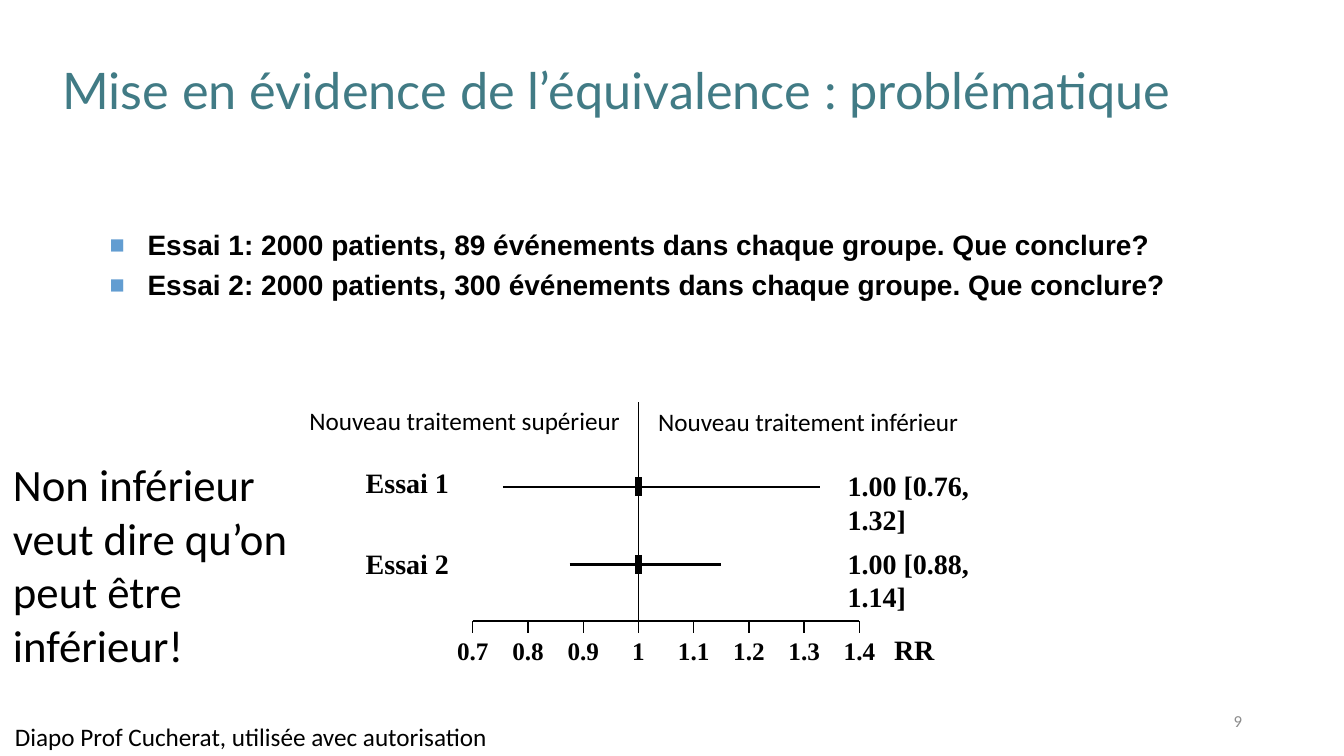
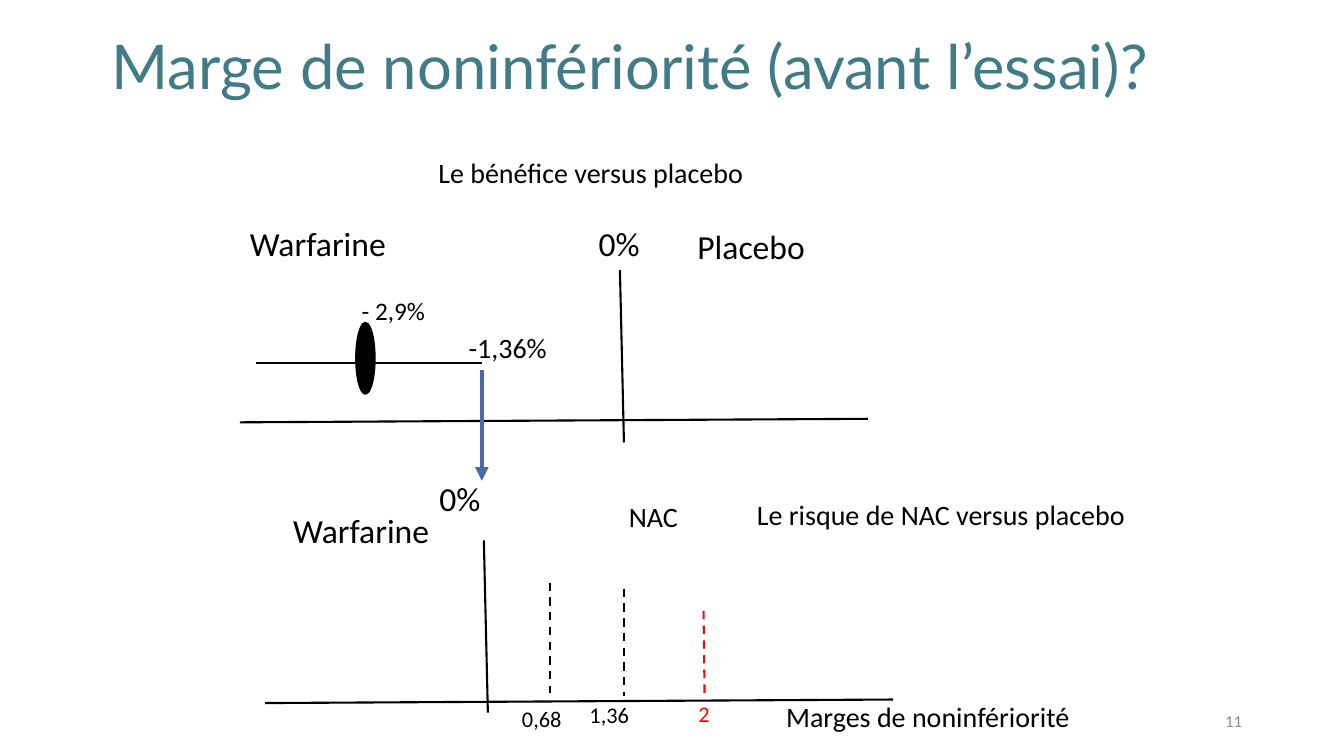
"""Build two slides on equivalence and non-inferiority margins."""
import dataclasses

import lxml.etree
import pptx
import pptx.dml.color
import pptx.enum.dml
import pptx.enum.shapes
import pptx.enum.text
import pptx.oxml.ns
import pptx.util

COLUMNS, ROWS = 133.33, 75
CELL = pptx.util.Inches(0.1)
ALIGN = pptx.enum.text.PP_ALIGN
ANCHOR = pptx.enum.text.MSO_ANCHOR


@dataclasses.dataclass(frozen=True)
class Theme:
    ink: str = "000000"
    title: str = "417B85"
    bullet: str = "629DD1"
    number: str = "8C8C8C"
    arrow: str = "4A66AC"
    alert: str = "FF0000"
    title_font: str = "Lato"
    body_font: str = "Calibri"
    list_font: str = "Arial"
    plot_font: str = "Times New Roman"
    statement_size: int = 32
    heading_size: int = 24
    text_size: int = 20
    label_size: int = 18
    small_size: int = 16
    number_size: int = 12
    thin: float = 1
    medium: float = 1.5
    thick: float = 3.25
    marker: float = 4.5


THEME = Theme()


def cells(count):
    return round(count * CELL)


def color(value):
    return pptx.dml.color.RGBColor.from_string(value)


def add_box(slide, left, top, width, height, wrap=False, anchor=ANCHOR.TOP):
    box = slide.shapes.add_textbox(cells(left), cells(top), cells(width), cells(height))
    frame = box.text_frame
    frame.word_wrap = wrap
    frame.vertical_anchor = anchor
    if not wrap:
        frame.auto_size = pptx.enum.text.MSO_AUTO_SIZE.SHAPE_TO_FIT_TEXT
    return frame


def add_run(paragraph, text, size, font=THEME.body_font, ink=THEME.ink, bold=False):
    run = paragraph.add_run()
    run.text = text
    run.font.size = pptx.util.Pt(size)
    run.font.name = font
    run.font.bold = bold
    run.font.color.rgb = color(ink)


def add_label(slide, text, left, top, width, size, align=ALIGN.LEFT, **style):
    paragraph = add_box(slide, left, top, width, size / 6 + 1).paragraphs[0]
    paragraph.alignment = align
    add_run(paragraph, text, size, **style)


def add_plot_label(slide, text, left, top, width, size=THEME.text_size, align=ALIGN.LEFT):
    add_label(slide, text, left, top, width, size, align, font=THEME.plot_font, bold=True)


def add_title(slide, text, left, top, width, size):
    paragraph = add_box(slide, left, top, width, 14.5, True, ANCHOR.MIDDLE).paragraphs[0]
    paragraph.line_spacing = 0.9
    add_run(paragraph, text, size, THEME.title_font, THEME.title)


def add_slide_number(slide, number):
    paragraph = add_box(slide, 94.2, 69.5, 30, 4, True, ANCHOR.MIDDLE).paragraphs[0]
    paragraph.alignment = ALIGN.RIGHT
    add_run(paragraph, number, THEME.number_size, ink=THEME.number)


def add_bullets(slide, lines, left, top, width, height):
    frame = add_box(slide, left, top, width, height, True)
    for index, text in enumerate(lines):
        paragraph = frame.add_paragraph() if index else frame.paragraphs[0]
        paragraph.space_before = pptx.util.Pt(4.5)
        add_run(paragraph, text, THEME.text_size, THEME.list_font, bold=True)
        properties = paragraph._p.get_or_add_pPr()
        indent = cells(3.75)
        properties.set("marL", str(indent))
        properties.set("indent", str(-indent))
        qualify = pptx.oxml.ns.qn
        fill = lxml.etree.SubElement(properties, qualify("a:buClr"))
        lxml.etree.SubElement(fill, qualify("a:srgbClr"), val=THEME.bullet)
        lxml.etree.SubElement(properties, qualify("a:buSzPct"), val="90000")
        lxml.etree.SubElement(properties, qualify("a:buFont"), typeface=THEME.list_font)
        lxml.etree.SubElement(properties, qualify("a:buChar"), char="■")


def add_line(slide, start, end, width=THEME.medium, ink=THEME.ink, dashed=False, arrow=False):
    connector = slide.shapes.add_connector(
        pptx.enum.shapes.MSO_CONNECTOR.STRAIGHT, *map(cells, (*start, *end)))
    line = connector.line
    line.color.rgb = color(ink)
    line.width = pptx.util.Pt(width)
    if dashed:
        line.dash_style = pptx.enum.dml.MSO_LINE.DASH
    if arrow:
        lxml.etree.SubElement(line._get_or_add_ln(), pptx.oxml.ns.qn("a:tailEnd"), type="triangle")
    lxml.etree.SubElement(connector._element.spPr, pptx.oxml.ns.qn("a:effectLst"))


def add_forest_plot(slide):
    axis_left, step, axis_row = 46.9, 5.48, 61.6
    ticks = ("0.7", "0.8", "0.9", "1", "1.1", "1.2", "1.3", "1.4")
    positions = [axis_left + step * index for index in range(len(ticks))]
    center = positions[ticks.index("1")]
    add_line(slide, (center, 39.9), (center, axis_row), THEME.thin)
    add_line(slide, (axis_left, axis_row), (positions[-1], axis_row), THEME.thin)
    for text, column in zip(ticks, positions):
        add_line(slide, (column, axis_row), (column, axis_row + 1.2), THEME.thin)
        width = 5.1 if "." in text else 3.3
        add_plot_label(slide, text, column - width / 2, 62.5, width,
                       THEME.label_size, ALIGN.CENTER)
    add_plot_label(slide, "RR", 87.7, 62.3, 6, align=ALIGN.CENTER)
    trials = (
        ("Essai 1", "1.00 [0.76, 1.32]", 49.9, 81.3, 48.3, 45.7),
        ("Essai 2", "1.00 [0.88, 1.14]", 56.5, 71.5, 56, 53.7),
    )
    for name, estimate, low, high, row, name_row in trials:
        add_line(slide, (low, row), (high, row))
        add_line(slide, (center, row - 0.95), (center, row + 0.95), THEME.marker)
        add_plot_label(slide, name, 35.3, name_row, 10.3)
        add_plot_label(slide, estimate, 83.1, row - 2.3, 20.5)
    add_label(slide, "Nouveau traitement supérieur", 29.7, 39.7, 33.2, THEME.label_size)
    add_label(slide, "Nouveau traitement inférieur", 64.3, 39.8, 32.1, THEME.label_size)


def add_axes(slide, left, row, zero, bottom):
    add_line(slide, (left, row), (left + 62.3, row - 0.35))
    add_line(slide, (zero, bottom), (zero - 0.4, bottom - 17.1))


def add_estimate(slide):
    add_line(slide, (25.4, 36), (47.8, 36))
    marker = slide.shapes.add_shape(
        pptx.enum.shapes.MSO_SHAPE.FLOWCHART_CONNECTOR,
        *map(cells, (35.3, 32, 1.9, 7.1)))
    marker.shadow.inherit = False
    marker.fill.solid()
    marker.fill.fore_color.rgb = color(THEME.ink)
    marker.line.color.rgb = color(THEME.ink)
    marker.line.width = pptx.util.Pt(THEME.thin)


def build_equivalence(slide):
    add_title(slide, "Mise en évidence de l’équivalence : problématique", 5.2, 2, 122.9, 36)
    add_bullets(slide, (
        "Essai 1: 2000 patients, 89 événements dans chaque groupe. Que conclure?",
        "Essai 2: 2000 patients, 300 événements dans chaque groupe. Que conclure?",
    ), 9.9, 22.1, 112.4, 10.6)
    add_forest_plot(slide)
    add_label(slide, "Diapo Prof Cucherat, utilisée avec autorisation", 0.5, 71.1, 49.4,
              THEME.label_size)
    statement = add_box(slide, 0.3, 44.8, 30.1, 22.6, True).paragraphs[0]
    add_run(statement, "Non inférieur veut dire qu’on peut être inférieur!", THEME.statement_size)
    add_slide_number(slide, "9")


def build_margin(slide):
    add_title(slide, "Marge de noninfériorité (avant l’essai)?", 10.1, -0.4, 115, 44)
    add_axes(slide, 23.8, 41.9, 61.9, 43.9)
    add_axes(slide, 26.3, 69.75, 48.4, 70.7)
    add_estimate(slide)
    add_line(slide, (47.8, 36.7), (47.8, 47.7), THEME.thick, THEME.arrow, arrow=True)
    labels = (
        ("0%", 58.4, 21.6, 6.1, THEME.heading_size),
        ("Warfarine", 23.8, 21.6, 16.4, THEME.heading_size),
        ("Placebo", 68.2, 21.9, 12.8, THEME.heading_size),
        ("0%", 42.6, 46.9, 6.1, THEME.heading_size),
        ("Warfarine", 28.1, 50.1, 16.4, THEME.heading_size),
        ("-1,36%", 45.5, 32.3, 9.8, THEME.text_size),
        ("- 2,9%", 34.9, 28.8, 8.4, THEME.label_size),
        ("Le bénéfice versus placebo", 42.5, 14.9, 32.6, THEME.text_size),
        ("NAC", 61.4, 49.1, 6.9, THEME.text_size),
        ("Le risque de NAC versus placebo", 74.1, 48.9, 38.9, THEME.text_size),
        ("Marges de noninfériorité", 77, 68.9, 30.4, THEME.text_size),
    )
    for label in labels:
        add_label(slide, *label)
    margins = (
        ("0,68", (54.6, 57.8), (54.6, 68.8), (50.8, 69.5, 6), THEME.ink),
        ("1,36", (61.9, 58.4), (61.9, 69), (57.5, 69.1, 6), THEME.ink),
        ("2", (69.8, 60.6), (69.9, 69.1), (68.3, 69, 3.2), THEME.alert),
    )
    for text, start, end, place, ink in margins:
        add_line(slide, start, end, ink=ink, dashed=True)
        add_label(slide, text, *place, THEME.small_size, ink=ink)
    add_slide_number(slide, "11")


def main():
    presentation = pptx.Presentation()
    presentation.slide_width = cells(COLUMNS)
    presentation.slide_height = cells(ROWS)
    blank = presentation.slide_layouts[6]
    for build in (build_equivalence, build_margin):
        build(presentation.slides.add_slide(blank))
    presentation.save("out.pptx")


if __name__ == "__main__":
    main()
